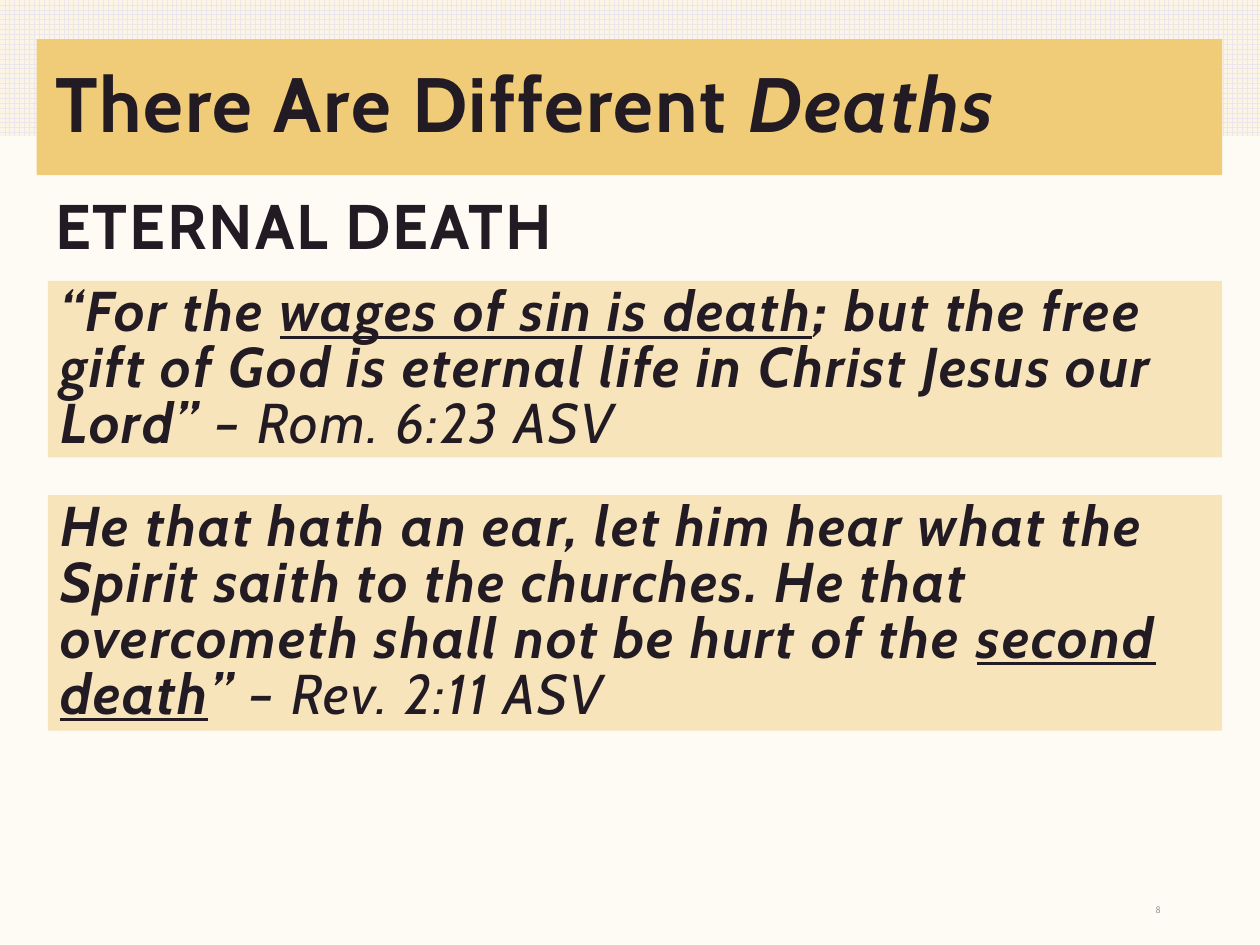
from pptx import Presentation
from pptx.dml.color import RGBColor
from pptx.enum.dml import MSO_PATTERN
from pptx.enum.shapes import MSO_SHAPE as SHAPE
from pptx.enum.text import MSO_ANCHOR as ANCHOR, MSO_AUTO_SIZE as FIT, PP_ALIGN as ALIGN
from pptx.util import Inches, Pt

COLORS = {"page": "FEFBF5", "grid": "EBE6EB", "cream": "FCF5E5", "band": "F0CC79",
          "verse": "F7E4BA", "ink": "231B23", "number": "8D8D8D"}


def add_block(shapes, left, top, width, height, color):
    block = shapes.add_shape(SHAPE.RECTANGLE, Inches(left), Inches(top), Inches(width), Inches(height))
    block.shadow.inherit = False
    block.line.fill.background()
    block.fill.solid()
    block.fill.fore_color.rgb = RGBColor.from_string(COLORS[color])
    return block


def write_text(shape, runs, size, font="Cabin", color="ink", bold=True, italic=False, tracking=1.1,
               line=None, before=0, align=ALIGN.LEFT, anchor=ANCHOR.TOP):
    frame = shape.text_frame
    frame.word_wrap = True
    frame.auto_size = FIT.NONE
    frame.vertical_anchor = anchor
    paragraph = frame.paragraphs[0]
    paragraph.alignment = align
    paragraph.line_spacing = line
    paragraph.space_before = Pt(before)
    for text, changes in runs:
        run = paragraph.add_run()
        run.text = text
        run.font.name = font
        run.font.size = Pt(size)
        run.font.color.rgb = RGBColor.from_string(COLORS[color])
        run.font.bold = changes.get("bold", bold)
        run.font.italic = changes.get("italic", italic)
        run.font.underline = changes.get("underline", False)
        run.font._element.set("spc", str(round(tracking * 100)))


deck = Presentation()
deck.slide_width, deck.slide_height = Inches(10), Inches(7.5)
slide = deck.slides.add_slide(deck.slide_layouts[5])
shapes = slide.shapes
slide.background.fill.solid()
slide.background.fill.fore_color.rgb = RGBColor.from_string(COLORS["page"])

grid_strip = add_block(shapes, 0, 0, 10, 1.08, "cream")
grid_strip.fill.patterned()
grid_strip.fill.pattern = MSO_PATTERN.LARGE_GRID
grid_strip.fill.fore_color.rgb = RGBColor.from_string(COLORS["grid"])
grid_strip.fill.back_color.rgb = RGBColor.from_string(COLORS["cream"])
add_block(shapes, 0.29, 0.31, 9.41, 1.08, "band")

title = shapes.title
title.left, title.top, title.width, title.height = Inches(0.34), Inches(0.53), Inches(9.36), Inches(0.64)
write_text(title, [("There Are Different ", {}), ("Deaths", {"italic": True})],
           size=44, line=0.9, anchor=ANCHOR.MIDDLE)
shapes._spTree.append(title._element)

heading = shapes.add_textbox(Inches(0.34), Inches(1.59), Inches(9.28), Inches(0.6))
write_text(heading, [("ETERNAL DEATH", {})], size=36, line=Pt(32), before=12)

verses = [
    (2.23, 1.4, "“For the ", "wages of sin is death",
     "; but the free gift of God is eternal life in Christ Jesus our Lord” ", "– Rom. 6:23 ASV"),
    (3.93, 1.87, "He that hath an ear, let him hear what the Spirit saith to the churches. "
     "He that overcometh shall not be hurt of the ", "second death", "” ", "– Rev. 2:11 ASV"),
]
for top, height, opening, stressed, ending, citation in verses:
    verse = add_block(shapes, 0.38, top, 9.32, height, "verse")
    write_text(verse, [(opening, {}), (stressed, {"underline": True}), (ending, {}), (citation, {"bold": False})],
               size=32, italic=True, line=Pt(32), before=11.2)

page_number = shapes.add_textbox(Inches(7.06), Inches(7.1), Inches(2.25), Inches(0.25))
write_text(page_number, [("8", {})], size=5.2, font="Noto Sans CJK JP", color="number", bold=False,
           tracking=0, align=ALIGN.RIGHT, anchor=ANCHOR.MIDDLE)

deck.save("out.pptx")
